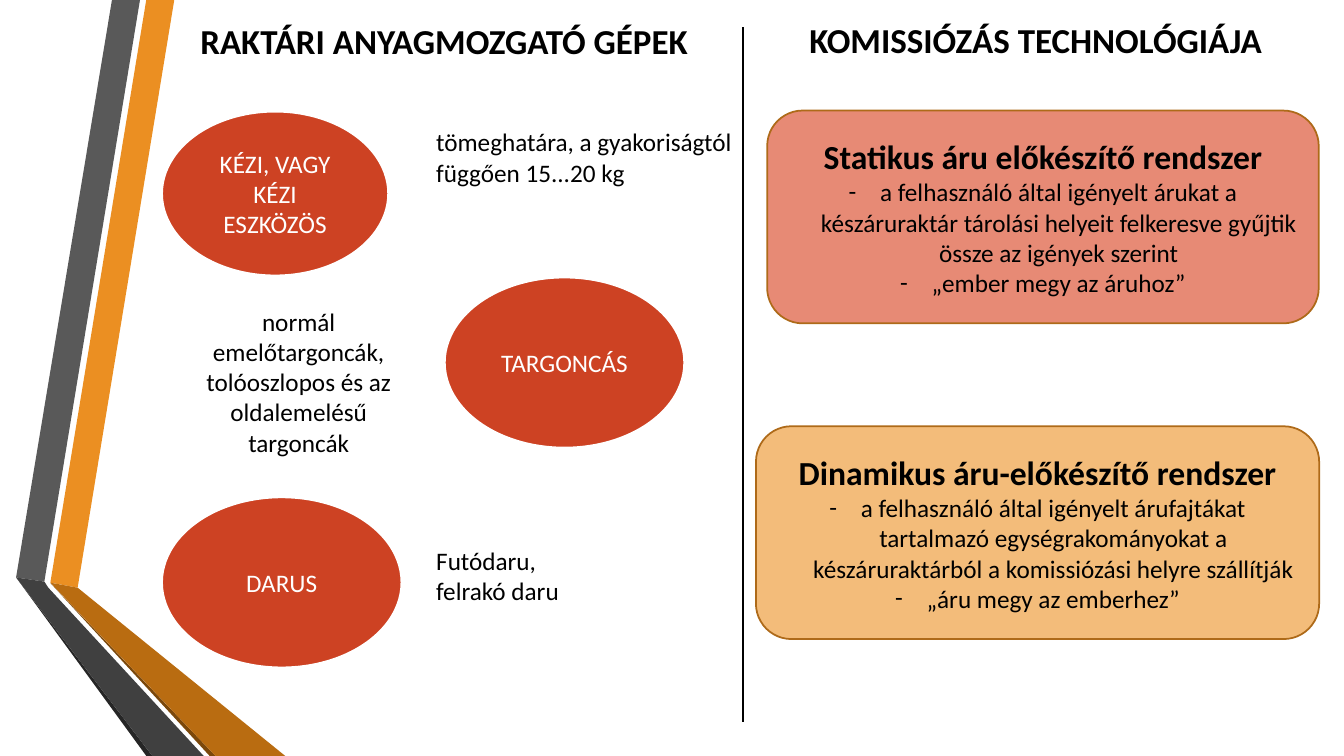
from dataclasses import dataclass

from lxml import etree
from pptx import Presentation
from pptx.dml.color import RGBColor
from pptx.enum.shapes import MSO_CONNECTOR, MSO_SHAPE
from pptx.enum.text import MSO_ANCHOR, MSO_AUTO_SIZE, PP_ALIGN
from pptx.oxml.ns import qn
from pptx.util import Pt

LEFT, CENTER = PP_ALIGN.LEFT, PP_ALIGN.CENTER
TOP, MIDDLE = MSO_ANCHOR.TOP, MSO_ANCHOR.MIDDLE
NO_AUTOFIT = MSO_AUTO_SIZE.NONE
ELLIPSE, ROUNDED = MSO_SHAPE.OVAL, MSO_SHAPE.ROUNDED_RECTANGLE
STRAIGHT = MSO_CONNECTOR.STRAIGHT

FONT = "Calibri"
HEADING, CARD_HEADING, BODY = 25, 24, 18
BULLET_INDENT = 22.5
COLORS = {
    "black": "000000", "white": "FFFFFF", "red": "CD4223",
    "salmon": "E78A75", "apricot": "F3BC7A", "card_line": "AE6A19",
    "orange": "EB8F22", "gray": "595959", "charcoal": "404040",
    "near_black": "262626", "ochre": "B96C11", "brown": "7B480B",
}

Box = tuple[float, float, float, float]


@dataclass
class Ribbon:
    color: str
    points: list[tuple[float, float]]


@dataclass
class Machine:
    name: str
    box: Box


@dataclass
class Note:
    lines: list[str]
    box: Box
    align: PP_ALIGN = LEFT


@dataclass
class Card:
    heading: str
    items: list[str]
    box: Box
    fill: str


RIBBONS = [
    Ribbon("orange", [(36, 416.2), (55.5, 419.8), (124.5, 0), (104.5, 0)]),
    Ribbon("gray", [(100, 0), (80, 0), (11.5, 412.5), (31.7, 415.5)]),
    Ribbon("near_black", [(11.5, 412.5), (104.5, 540), (108.8, 540)]),
    Ribbon("brown", [(36, 416.5), (149.8, 540), (154, 540)]),
    Ribbon("ochre", [(36, 416.2), (154, 540), (203.8, 540), (55.5, 419.8)]),
    Ribbon("charcoal", [(145.5, 540), (34.5, 419.8), (31.7, 415.5),
                        (11.5, 412.5), (108.8, 540)]),
]
MACHINES = [
    Machine("KÉZI, VAGY KÉZI ESZKÖZÖS", (115.5, 79.5, 162, 117.5)),
    Machine("TARGONCÁS", (317.5, 198, 171.5, 122)),
    Machine("DARUS", (115.5, 355, 171.5, 122)),
]
NOTES = [
    Note(["tömeghatára, a gyakoriságtól függően 15...20 kg"],
         (304.5, 87, 226.5, 94.5)),
    Note(["normál emelőtargoncák, tolóoszlopos és az oldalemelésű targoncák"],
         (122.2, 215, 182.3, 138), CENTER),
    Note(["Futódaru,", "felrakó daru"], (304.5, 386, 198, 51)),
]
CARDS = [
    Card("Statikus áru előkészítő rendszer",
         ["a felhasználó által igényelt árukat a készáruraktár tárolási "
          "helyeit felkeresve gyűjtik össze az igények szerint",
          "„ember megy az áruhoz”"],
         (548, 79, 394, 152), "salmon"),
    Card("Dinamikus áru-előkészítő rendszer",
         ["a felhasználó által igényelt árufajtákat tartalmazó "
          "egységrakományokat a készáruraktárból a komissiózási helyre szállítják",
          "„áru megy az emberhez”"],
         (540, 304.5, 402.3, 152), "apricot"),
]


def rgb(name: str) -> RGBColor:
    return RGBColor.from_string(COLORS[name])


def place(s, box: Box) -> None:
    s.left, s.top, s.width, s.height = map(Pt, box)


def setup_frame(s, anchor=TOP):
    tf = s.text_frame
    tf.word_wrap = True
    tf.auto_size = NO_AUTOFIT
    tf.vertical_anchor = anchor
    return tf


def add_text(tf, text: str, *, size: float = BODY, color: str = "black",
             bold: bool = False, align: PP_ALIGN = LEFT, bullet: str = "") -> None:
    """Fill the first paragraph if it is empty, otherwise append a new one."""
    p = tf.paragraphs[0] if not tf.text else tf.add_paragraph()
    p.alignment = align
    r = p.add_run()
    r.text = text
    r.font.name, r.font.size, r.font.bold = FONT, Pt(size), bold
    r.font.color.rgb = rgb(color)
    if bullet:
        pPr = p._p.get_or_add_pPr()
        pPr.set("marL", str(Pt(BULLET_INDENT)))
        pPr.set("indent", str(-Pt(BULLET_INDENT)))
        etree.SubElement(pPr, qn("a:buFont")).set("typeface", FONT)
        etree.SubElement(pPr, qn("a:buChar")).set("char", bullet)


def add_ribbon(shapes, ribbon: Ribbon) -> None:
    start, *rest = [(Pt(x), Pt(y)) for x, y in ribbon.points]
    builder = shapes.build_freeform(*start)
    builder.add_line_segments(rest, close=True)
    s = builder.convert_to_shape()
    s.shadow.inherit = False
    s.fill.solid()
    s.fill.fore_color.rgb = rgb(ribbon.color)
    s.line.fill.background()


def add_filled(shapes, kind, box: Box, fill: str, line: str, width: float):
    """Draw a preset shape and return its text frame."""
    s = shapes.add_shape(kind, *map(Pt, box))
    s.shadow.inherit = False
    s.fill.solid()
    s.fill.fore_color.rgb = rgb(fill)
    s.line.color.rgb = rgb(line)
    s.line.width = Pt(width)
    return setup_frame(s, MIDDLE)


def add_textbox(shapes, box: Box):
    return setup_frame(shapes.add_textbox(*map(Pt, box)))


def add_divider(shapes) -> None:
    s = shapes.add_connector(STRAIGHT, Pt(530.6), Pt(19.5), Pt(530.6), Pt(515.5))
    s.line.color.rgb = rgb("black")
    s.line.width = Pt(1.25)
    etree.SubElement(s._element.spPr, qn("a:effectLst"))


def main() -> None:
    prs = Presentation()
    prs.slide_width, prs.slide_height = Pt(960), Pt(540)
    slide = prs.slides.add_slide(prs.slide_layouts[5])
    shapes = slide.shapes

    for ribbon in RIBBONS:
        add_ribbon(shapes, ribbon)

    place(shapes.title, (31.7, 10, 571, 37.5))
    add_text(setup_frame(shapes.title), "RAKTÁRI ANYAGMOZGATÓ GÉPEK",
             size=HEADING, bold=True, align=CENTER)
    add_text(add_textbox(shapes, (571, 10, 379.5, 37.5)),
             "KOMISSIÓZÁS TECHNOLÓGIÁJA", size=HEADING, bold=True)

    for machine in MACHINES:
        tf = add_filled(shapes, ELLIPSE, machine.box, "red", "white", 1.75)
        add_text(tf, machine.name, color="white", align=CENTER)

    for note in NOTES:
        tf = add_textbox(shapes, note.box)
        for line in note.lines:
            add_text(tf, line, align=note.align)

    add_divider(shapes)

    for card in CARDS:
        tf = add_filled(shapes, ROUNDED, card.box, card.fill, "card_line", 1.25)
        add_text(tf, card.heading, size=CARD_HEADING, bold=True, align=CENTER)
        for item in card.items:
            add_text(tf, item, align=CENTER, bullet="-")

    prs.save("out.pptx")


if __name__ == "__main__":
    main()
